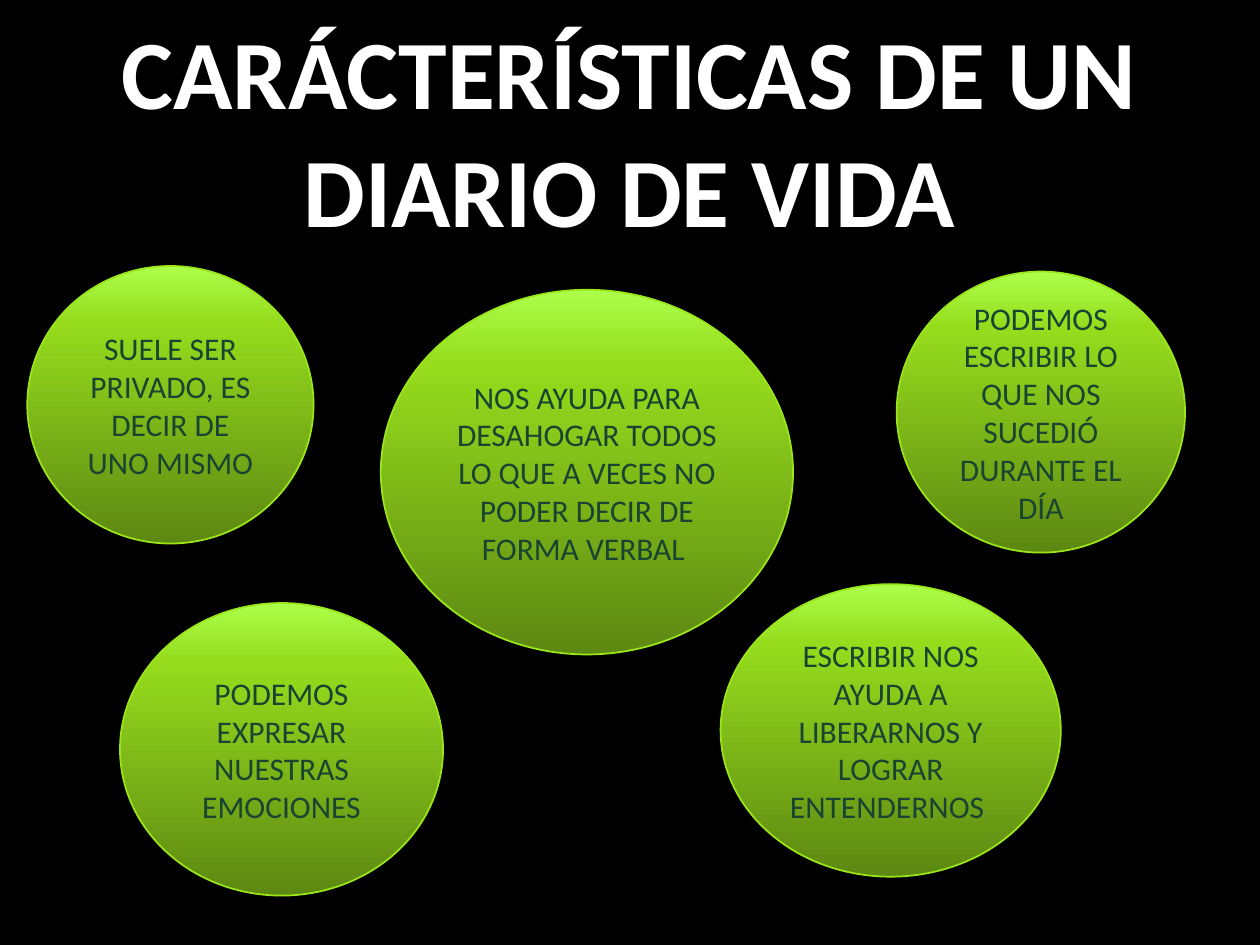
from copy import deepcopy

from pptx import Presentation
from pptx.dml.color import RGBColor
from pptx.enum import shapes, text
from pptx.oxml import ns
from pptx.util import Pt


def colour(value):
    return RGBColor.from_string(value)


class DiaryPage:
    """Holds the style and the current slide, with a method per kind of element."""

    background = "000000"
    edge = "9BE618"
    gradient = [(0, "5D8812"), (0.8, "96DC1D"), (1, "ACFF4A")]
    title_font = {"name": "Calibri", "size": Pt(56), "bold": True}
    title_colour = "FFFFFF"
    bubble_font = {"name": "Calibri", "size": Pt(18), "bold": False}
    bubble_colour = "194431"

    def __init__(self, deck):
        self.page = deck.slides.add_slide(deck.slide_layouts[5])
        fill = self.page.background.fill
        fill.solid()
        fill.fore_color.rgb = colour(self.background)

    def label(self, box, words, font, ink):
        frame = box.text_frame
        frame.word_wrap = True
        frame.auto_size = text.MSO_AUTO_SIZE.NONE
        frame.vertical_anchor = text.MSO_ANCHOR.MIDDLE
        para = frame.paragraphs[0]
        para.alignment = text.PP_ALIGN.CENTER
        span = para.add_run()
        span.text = words
        for name, value in font.items():
            setattr(span.font, name, value)
        span.font.color.rgb = colour(ink)

    def title(self, words, left, top, width, height):
        box = self.page.shapes.title
        place = {"left": left, "top": top, "width": width, "height": height}
        for name, value in place.items():
            setattr(box, name, Pt(value))
        self.label(box, words, self.title_font, self.title_colour)

    def bubble(self, words, *place):
        box = self.page.shapes.add_shape(
            shapes.MSO_SHAPE.OVAL, *(Pt(length) for length in place))
        box.shadow.inherit = False
        box.line.color.rgb = colour(self.edge)
        box.line.width = Pt(1)
        self.shade(box)
        self.label(box, words, self.bubble_font, self.bubble_colour)

    def shade(self, box):
        box.fill.gradient()
        box.fill.gradient_angle = 90
        stops = box._element.spPr.find(".//" + ns.qn("a:gsLst"))
        stops.append(deepcopy(stops[0]))
        for stop, (position, value) in zip(box.fill.gradient_stops, self.gradient):
            stop.position = position
            stop.color.rgb = colour(value)


def main():
    deck = Presentation()
    deck.slide_width, deck.slide_height = Pt(720), Pt(540)
    page = DiaryPage(deck)
    page.title("CARÁCTERÍSTICAS DE UN DIARIO DE VIDA", 61.2, 8.6, 597, 130.3)
    bubbles = [
        ("SUELE SER PRIVADO, ES DECIR DE UNO MISMO", 15.6, 152, 163.6, 158.6),
        ("NOS AYUDA PARA DESAHOGAR TODOS LO QUE A VECES NO PODER DECIR "
         "DE FORMA VERBAL ", 217.6, 165.6, 235.6, 208.4),
        ("PODEMOS ESCRIBIR LO QUE NOS SUCEDIÓ DURANTE EL DÍA",
         512.4, 155.2, 164.8, 160.6),
        ("PODEMOS EXPRESAR NUESTRAS EMOCIONES", 68.6, 344.6, 184.6, 167.2),
        ("ESCRIBIR NOS AYUDA A LIBERARNOS Y LOGRAR ENTENDERNOS ",
         411.8, 333.8, 194.4, 167.2),
    ]
    for bubble in bubbles:
        page.bubble(*bubble)
    deck.save("out.pptx")


if __name__ == "__main__":
    main()
